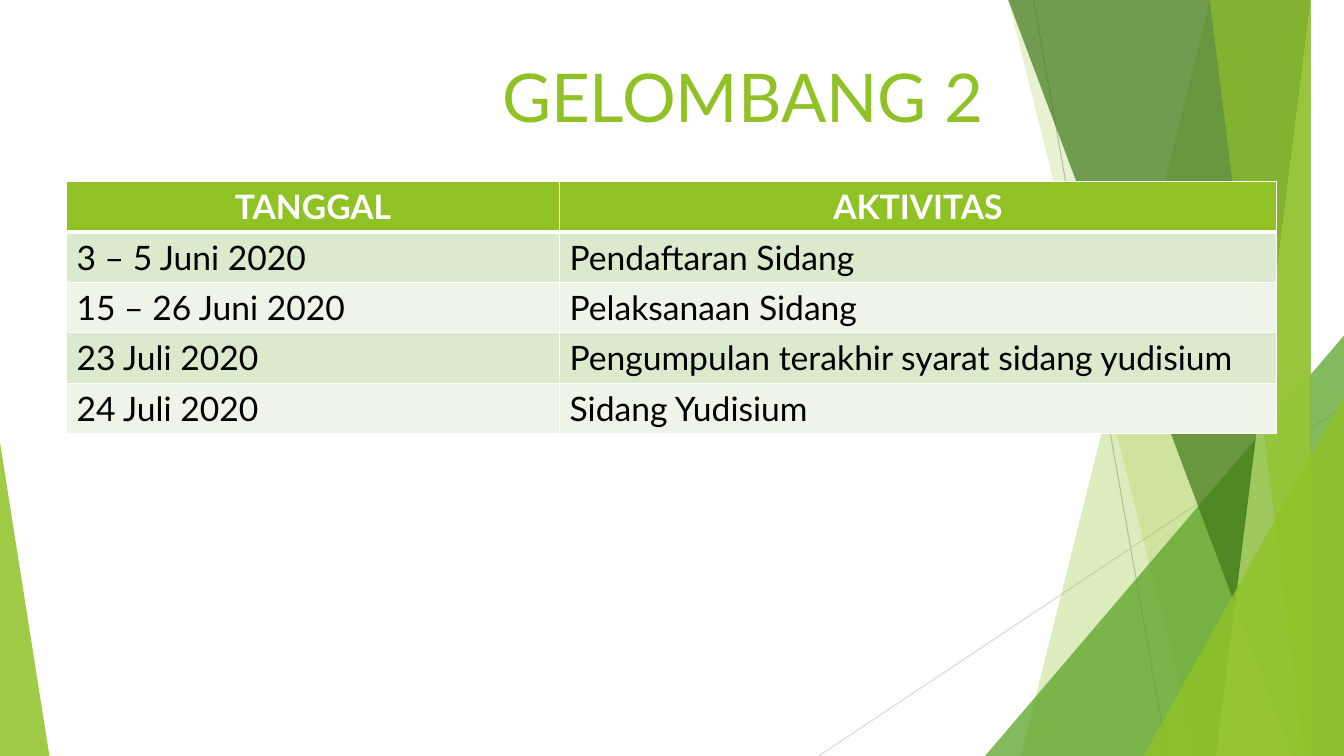
from lxml import etree
from pptx import Presentation
from pptx.dml.color import RGBColor
from pptx.enum import shapes, text
from pptx.oxml import ns
from pptx.util import Inches, Pt

COLORS = {
    "lime": "90C226", "green": "54A021", "forest": "3F7819", "pale": "C0E474",
    "band_dark": "DBE9CD", "band_light": "EEF4E8",
    "gray": "BFBFBF", "light_gray": "D9D9D9", "white": "FFFFFF", "black": "000000",
}
FONT = "Lato"
TOP, RIGHT, BOTTOM = -0.01, 13.33, 7.5

# start, end, color
THIN_LINES = [
    ((10.25, 0), (11.58, 7.5), "gray"),
    ((13.33, 4.03), (8.12, 7.5), "light_gray"),
]
# Bands reach the right edge: top-left x, bottom-left x, color, opacity
# Triangles: left, top, width, apex position, color, opacity
FACETS = [
    ("band", (12.28, 10.04), "lime", 30),
    ("band", (10.5, 11.83), "lime", 20),
    ("triangle", (9.77, 3.33, 3.56, 1), "green", 72),
    ("band", (10.21, 12.91), "forest", 70),
    ("band", (13.03, 11.92), "pale", 70),
    ("band", (11.96, 13.18), "lime", 65),
    ("triangle", (11.34, 3.93, 1.99, 1), "lime", 80),
    ("triangle", (0, 4.39, 0.49, 0), "lime", 85),
]
SCHEDULE = [
    ("TANGGAL", "AKTIVITAS"),
    ("3 – 5 Juni 2020", "Pendaftaran Sidang"),
    ("15 – 26 Juni 2020", "Pelaksanaan Sidang"),
    ("23 Juli 2020", "Pengumpulan terakhir syarat sidang yudisium"),
    ("24 Juli 2020", "Sidang Yudisium"),
]


def rgb(name):
    return RGBColor.from_string(COLORS[name])


def write(frame, words, size, color, bold=False, align=text.PP_ALIGN.LEFT):
    para = frame.paragraphs[0]
    para.alignment = align
    span = para.add_run()
    span.text = words
    span.font.name = FONT
    span.font.size = Pt(size)
    span.font.bold = bold
    span.font.color.rgb = rgb(color)


def add_thin_line(group, start, end, color):
    line = group.shapes.add_connector(
        shapes.MSO_CONNECTOR.STRAIGHT, *map(Inches, start + end))
    line.line.color.rgb = rgb(color)
    line.line.width = Pt(0.75)
    etree.SubElement(line.element.spPr, ns.qn("a:effectLst"))


def add_band(group, top_x, bottom_x):
    builder = group.shapes.build_freeform(top_x, TOP, scale=Inches(1))
    builder.add_line_segments([(RIGHT, TOP), (RIGHT, BOTTOM), (bottom_x, BOTTOM)])
    return builder.convert_to_shape()


def add_triangle(group, left, top, width, apex):
    triangle = group.shapes.add_shape(
        shapes.MSO_SHAPE.ISOSCELES_TRIANGLE,
        *map(Inches, (left, top, width, BOTTOM - top)))
    triangle.adjustments[0] = apex
    return triangle


def paint(shape, color, opacity):
    """Fill a shape with a translucent color and no outline."""
    shape.shadow.inherit = False
    shape.line.fill.background()
    shape.fill.solid()
    shape.fill.fore_color.rgb = rgb(color)
    tint = shape.element.spPr.find(".//" + ns.qn("a:srgbClr"))
    etree.SubElement(tint, ns.qn("a:alpha"), val=str(opacity * 1000))


def add_decoration(page):
    group = page.shapes.add_group_shape()
    for start, end, color in THIN_LINES:
        add_thin_line(group, start, end, color)
    builders = {"band": add_band, "triangle": add_triangle}
    for kind, geometry, color, opacity in FACETS:
        paint(builders[kind](group, *geometry), color, opacity)


def place_title(page, words):
    """Put the title placeholder in place, above the decoration."""
    title = page.shapes.title
    title.left, title.top, title.width, title.height = map(
        Inches, (4.88, 0.5, 5.54, 0.67))
    frame = title.text_frame
    frame.auto_size = text.MSO_AUTO_SIZE.NONE
    frame.vertical_anchor = text.MSO_ANCHOR.TOP
    write(frame, words, 48, "lime")
    title.element.getparent().append(title.element)


def set_borders(cell, **widths):
    properties = cell._tc.get_or_add_tcPr()
    for side in ("L", "R", "T", "B"):
        border = etree.SubElement(
            properties, ns.qn("a:ln" + side), w=str(Pt(widths.get(side, 1))))
        fill = etree.SubElement(border, ns.qn("a:solidFill"))
        etree.SubElement(fill, ns.qn("a:srgbClr"), val=COLORS["white"])


def add_schedule(page):
    row_height = Inches(0.5)
    table = page.shapes.add_table(
        len(SCHEDULE), 2, Inches(0.66), Inches(1.8), Inches(12),
        row_height * len(SCHEDULE)).table
    for column, width in zip(table.columns, (4.89, 7.11)):
        column.width = Inches(width)
    for r, row in enumerate(SCHEDULE):
        for c, words in enumerate(row):
            cell = table.cell(r, c)
            if r == 0:
                fill = "lime"
                set_borders(cell, B=3)
                write(cell.text_frame, words, 24, "white", bold=True,
                      align=text.PP_ALIGN.CENTER)
            else:
                fill = "band_dark" if r % 2 else "band_light"
                set_borders(cell, T=3 if r == 1 else 1)
                write(cell.text_frame, words, 24, "black")
            cell.fill.solid()
            cell.fill.fore_color.rgb = rgb(fill)


def main():
    deck = Presentation()
    deck.slide_width, deck.slide_height = Inches(13.33), Inches(7.5)
    page = deck.slides.add_slide(deck.slide_layouts.get_by_name("Title Only"))
    add_decoration(page)
    place_title(page, "GELOMBANG 2")
    add_schedule(page)
    deck.save("out.pptx")


if __name__ == "__main__":
    main()
